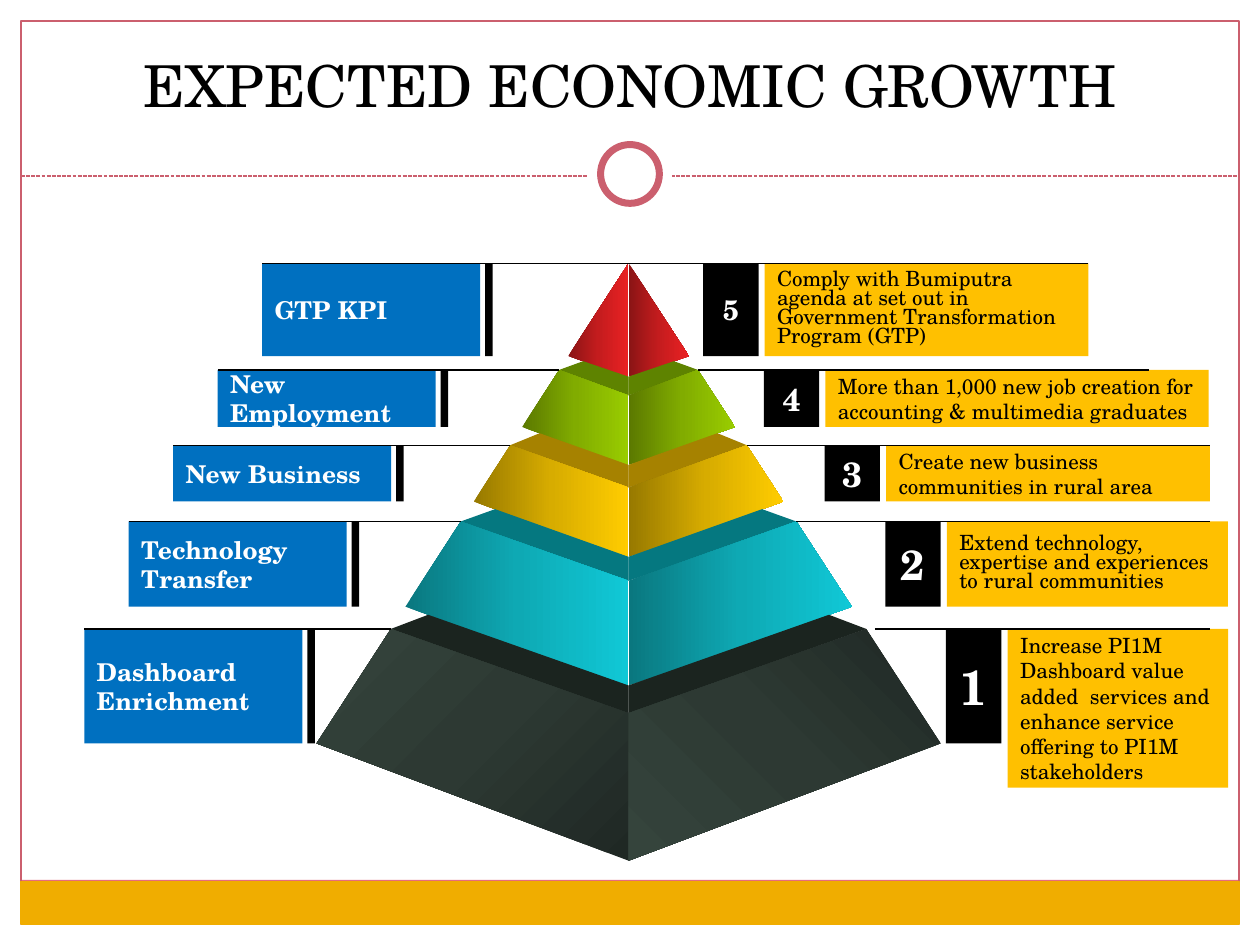
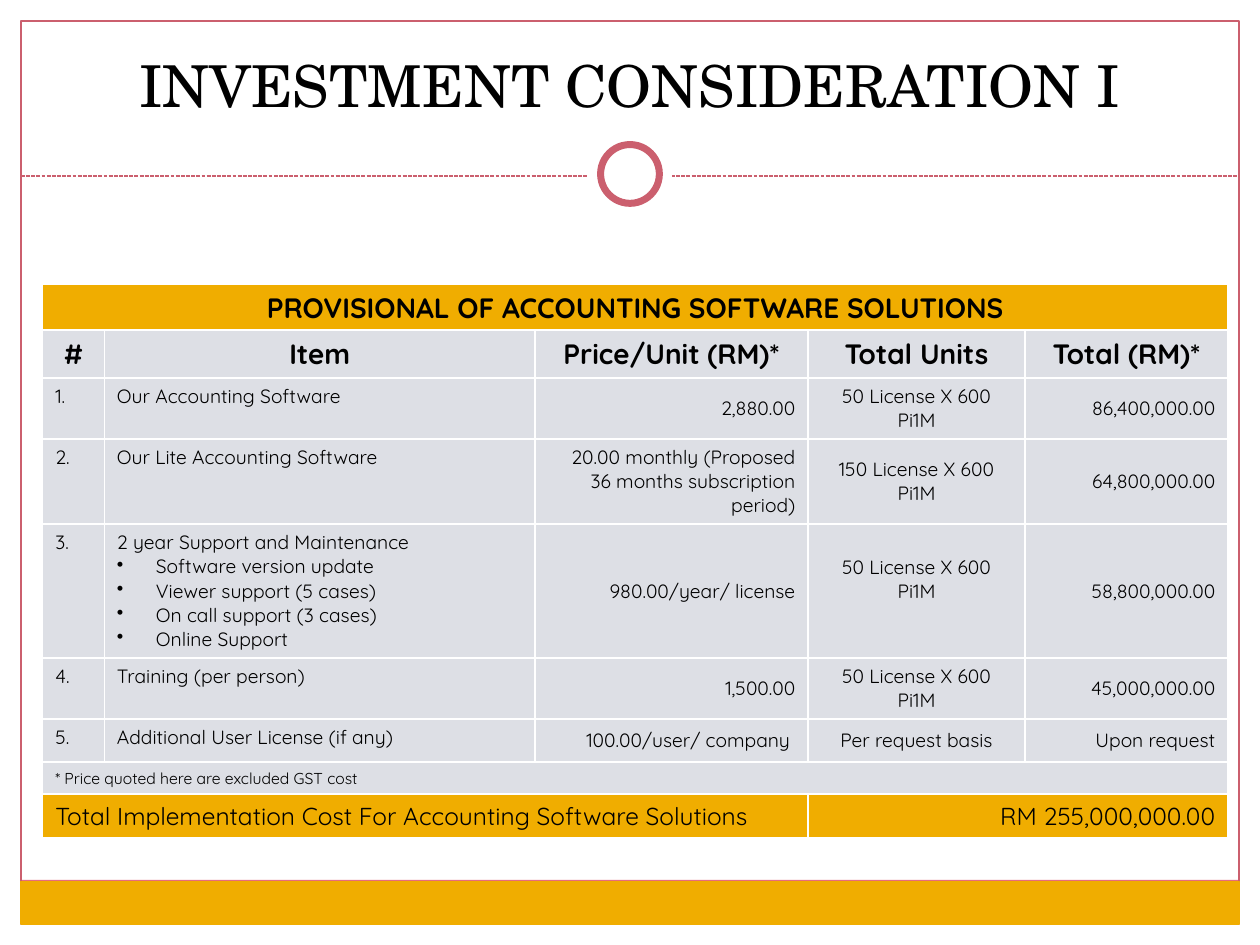
from lxml.etree import SubElement
from pptx import Presentation
from pptx.dml.color import RGBColor
from pptx.enum.dml import MSO_LINE
from pptx.enum.shapes import MSO_CONNECTOR, MSO_SHAPE as SHAPE
from pptx.enum.text import MSO_ANCHOR as ANCHOR, PP_ALIGN as ALIGN
from pptx.oxml import parse_xml
from pptx.oxml.ns import nsdecls, qn
from pptx.util import Pt

COLORS = {
    "black": "000000", "white": "FFFFFF", "rose": "CB5F6E", "pink": "E66C7D",
    "gold": "F0AD00", "amber": "FFC000", "blue": "0070C0", "grey": "DDDFE5",
}
SERIF, SANS = "TeX Gyre Schola", "Quicksand"

# Formats: font values, with the colour as a key of COLORS
TITLE = dict(name=SERIF, size=Pt(33), color="black")
LABEL = dict(name=SERIF, size=Pt(14), bold=True, color="white")
DETAIL = dict(name=SERIF, size=Pt(12), color="black")
HEAD = dict(name=SANS, size=Pt(16), bold=True, color="black")
BODY = dict(name=SANS, size=Pt(11), bold=False, color="black")
NOTE = dict(BODY, size=Pt(9))
TOTAL = dict(BODY, size=Pt(14))

# Pyramid, tip to base. Levels are heights on the slide: the outer edge of a
# face runs from top to bottom, its centre edge from mid_top to mid_bottom.
# back is the half width where the lid meets the tier above.
CENTRE, APEX, SLOPE = 359.2, 150.5, 0.65
TIERS = [
    dict(label="GTP KPI", number="5", number_size=16,
         detail="Comply with Bumiputra agenda at set out in Government "
                "Transformation Program (GTP)",
         detail_width=185, spacing=11, line_end=622,
         top=150.5, bottom=203.5, mid_top=150.5, mid_bottom=215.3,
         face=("8A1415", "C41C1E", "E92123")),
    dict(label="New Employment", number="4", number_size=18,
         detail="More than 1,000 new job creation for accounting & "
                "multimedia graduates",
         detail_width=219, line_end=656.6,
         top=211.4, bottom=244, mid_top=226, mid_bottom=265.7, back=25.9,
         face=("5B7900", "81AC00", "99CC00"), lid="5E8300"),
    dict(label="New Business", number="3", number_size=20,
         detail="Create new business communities in rural area",
         detail_width=185, line_end=691.2,
         top=254.4, bottom=286.6, mid_top=278.6, mid_bottom=318.2, back=50.8,
         face=("977900", "D7AC00", "FFCC00"), lid="A68200"),
    dict(label="Technology Transfer", number="2", number_size=24,
         detail="Extend technology, expertise and experiences to rural "
                "communities",
         detail_width=160.6, spacing=11, line_end=691.2,
         top=298, bottom=346.7, mid_top=331.9, mid_bottom=391.7, back=76.3,
         face=("0A777F", "0EA9B4", "10C8D6"), lid="057880"),
    dict(label="Dashboard Enrichment", number="1", number_size=28,
         detail="Increase PI1M Dashboard value added  services and enhance "
                "service offering to PI1M stakeholders",
         detail_width=126, detail_height=90.7, line_gap=5, line_end=691.2,
         top=359.4, bottom=424.8, mid_top=407.5, mid_bottom=491.8, back=114.5,
         face=("1F2824", "2D3933", "35443C"), lid="1B241F", angles=(225, 135)),
]

TABLE_TITLE = "PROVISIONAL OF ACCOUNTING SOFTWARE SOLUTIONS"
HEADINGS = ["#", "Item", "Price/Unit (RM)*", "Total Units", "Total (RM)*"]
ITEMS = [
    ["1.", "Our Accounting Software", "2,880.00",
     "50 License X 600 Pi1M", "86,400,000.00"],
    ["2.", "Our Lite Accounting Software",
     "20.00 monthly (Proposed 36 months subscription period)",
     "150 License X 600 Pi1M", "64,800,000.00"],
    ["3.", ["2 year Support and Maintenance", "Software version update",
            "Viewer support (5 cases)", "On call support (3 cases)",
            "Online Support"],
     "980.00/year/ license", "50 License X 600 Pi1M", "58,800,000.00"],
    ["4.", "Training (per person)", "1,500.00",
     "50 License X 600 Pi1M", "45,000,000.00"],
    ["5.", "Additional User License (if any)", "100.00/user/ company ",
     "Per request basis", "Upon request"],
]
FOOTNOTE = "* Price quoted here are excluded GST cost"
TOTAL_LABEL = "Total Implementation Cost For Accounting Software Solutions"
TOTAL_VALUE = "RM 255,000,000.00"
COL_WIDTHS = [35.2, 246.2, 156, 124, 116]
ROW_HEIGHTS = [26.3, 27.4, 34.9, 48.6, 76.6, 34.9, 24.6, 18.3, 25.1]
ITEM_STYLES = [(ALIGN.LEFT, ANCHOR.TOP), (ALIGN.LEFT, ANCHOR.TOP),
               (ALIGN.RIGHT, ANCHOR.MIDDLE), (ALIGN.CENTER, ANCHOR.MIDDLE),
               (ALIGN.RIGHT, ANCHOR.MIDDLE)]


def rgb(color):
    return RGBColor.from_string(COLORS.get(color, color))


def write(tf, lines, fmt, align=ALIGN.LEFT, spacing=None):
    """Fill a text frame, one paragraph for each line."""
    tf.word_wrap = True
    for i, line in enumerate(lines):
        p = tf.paragraphs[0] if i == 0 else tf.add_paragraph()
        p.alignment = align
        if spacing:
            p.line_spacing = Pt(spacing)
        r = p.add_run()
        r.text = line
        for key, value in fmt.items():
            if key == "color":
                r.font.color.rgb = rgb(value)
            else:
                setattr(r.font, key, value)


def add_box(s, x, y, w, h, fill=None, line=None, weight=0.75,
            kind=SHAPE.RECTANGLE):
    sp = s.shapes.add_shape(kind, Pt(x), Pt(y), Pt(w), Pt(h))
    sp.shadow.inherit = False
    if fill:
        sp.fill.solid()
        sp.fill.fore_color.rgb = rgb(fill)
    else:
        sp.fill.background()
    if line:
        sp.line.color.rgb = rgb(line)
        sp.line.width = Pt(weight)
    else:
        sp.line.fill.background()
    return sp


def add_text_box(s, x, y, w, h, fill, text, fmt, **paragraph):
    sp = add_box(s, x, y, w, h, fill)
    sp.text_frame.vertical_anchor = ANCHOR.MIDDLE
    write(sp.text_frame, [text], fmt, **paragraph)


def add_line(s, x1, x2, y, color, dash=None):
    cn = s.shapes.add_connector(MSO_CONNECTOR.STRAIGHT,
                                Pt(x1), Pt(y), Pt(x2), Pt(y))
    cn.line.color.rgb = rgb(color)
    cn.line.width = Pt(0.75)
    if dash:
        cn.line.dash_style = dash
    SubElement(cn._element.spPr, qn("a:effectLst"))


def add_polygon(s, points):
    (x, y), *rest = [(Pt(px), Pt(py)) for px, py in points]
    builder = s.shapes.build_freeform(x, y)
    builder.add_line_segments(rest, close=True)
    sp = builder.convert_to_shape()
    sp.shadow.inherit = False
    sp.line.fill.background()
    return sp


def fill_gradient(sp, colors, angle):
    stops = "".join(
        f'<a:gs pos="{pos}"><a:srgbClr val="{color}"/></a:gs>'
        for pos, color in zip((0, 50000, 100000), colors))
    grad = parse_xml(f'<a:gradFill {nsdecls("a")} rotWithShape="1"><a:gsLst>{stops}'
                     f'</a:gsLst><a:lin ang="{angle * 60000}" scaled="0"/></a:gradFill>')
    sp._element.spPr.find(qn("a:custGeom")).addnext(grad)


def new_slide(prs, title):
    """Blank slide with the shared frame, ring, footer band and title."""
    s = prs.slides.add_slide(prs.slide_layouts[6])
    add_box(s, 12, 502.8, 695.5, 24.5, "pink")
    add_box(s, 12, 12, 696, 516, line="rose")
    add_line(s, 12, 708, 100.6, "rose", MSO_LINE.SQUARE_DOT)
    add_box(s, 336, 75.4, 48, 48, "white", kind=SHAPE.OVAL)
    add_box(s, 343.2, 82.6, 33.6, 33.6, "white", "rose", 4, SHAPE.OVAL)
    add_box(s, 12, 503.6, 696, 24.4, "gold", "gold")
    tb = s.shapes.add_textbox(Pt(24.5), Pt(18), Pt(671), Pt(60))
    tb.text_frame.vertical_anchor = ANCHOR.MIDDLE
    write(tb.text_frame, [title], TITLE, ALIGN.CENTER)
    return s


def half_width(y):
    return SLOPE * (y - APEX)


def add_tier(s, tier, above):
    """Both faces of a tier, and its lid up to the tier above."""
    top, bottom = tier["top"], tier["bottom"]
    for side, angle in zip((-1, 1), tier.get("angles", (0, 0))):
        def outline(points):
            return [(CENTRE + side * dx, y) for dx, y in points]

        if above:
            edge, drop = half_width(above["bottom"]), above["mid_bottom"]
            back_y = drop - (drop - above["bottom"]) * tier["back"] / edge
            lid = add_polygon(s, outline([
                (0, drop), (0, tier["mid_top"]),
                (half_width(top), top), (tier["back"], back_y)]))
            lid.fill.solid()
            lid.fill.fore_color.rgb = rgb(tier["lid"])
        face = add_polygon(s, outline([
            (half_width(top), top), (0, tier["mid_top"]),
            (0, tier["mid_bottom"]), (half_width(bottom), bottom)]))
        fill_gradient(face, tier["face"], angle)


def add_tier_labels(s, i, tier):
    y, h = tier["top"], tier["bottom"] - tier["top"]
    left, right = 149.8 - 25.4 * i, 401.8 + 34.7 * i
    add_text_box(s, left, y, 124.6, h, "blue", tier["label"], LABEL)
    add_box(s, left + 127.4, y, 4.3, h, "black")
    add_text_box(s, right, y, 31.7, h, "black", tier["number"],
                 dict(LABEL, size=Pt(tier["number_size"])), align=ALIGN.CENTER)
    add_text_box(s, right + 35.2, y, tier["detail_width"],
                 tier.get("detail_height", h), "amber", tier["detail"], DETAIL,
                 spacing=tier.get("spacing"))
    reach = half_width(y)
    add_line(s, CENTRE - reach, left, y, "black")
    add_line(s, CENTRE + reach + tier.get("line_gap", 0), tier["line_end"], y, "black")


def build_growth(prs):
    s = new_slide(prs, "EXPECTED ECONOMIC GROWTH")
    for tier, above in zip(TIERS, [None] + TIERS):
        add_tier(s, tier, above)
    for i, tier in enumerate(TIERS):
        add_tier_labels(s, i, tier)


def add_bullet(p):
    pPr = p._p.get_or_add_pPr()
    pPr.set("marL", str(Pt(22.3)))
    pPr.set("indent", str(-Pt(22.3)))
    SubElement(pPr, qn("a:buChar"), char="•")


def build_investment(prs):
    s = new_slide(prs, "INVESTMENT CONSIDERATION I")
    table = s.shapes.add_table(
        len(ROW_HEIGHTS), len(COL_WIDTHS), Pt(24.4), Pt(162.2),
        Pt(sum(COL_WIDTHS)), Pt(sum(ROW_HEIGHTS))).table
    for col, width in zip(table.columns, COL_WIDTHS):
        col.width = Pt(width)
    for row, height in zip(table.rows, ROW_HEIGHTS):
        row.height = Pt(height)

    def put(row, col, content, fmt, align=ALIGN.LEFT, anchor=ANCHOR.TOP,
            fill="grey", span=1):
        cell = table.cell(row, col)
        if span > 1:
            cell.merge(table.cell(row, col + span - 1))
        for part in range(col, col + span):
            table.cell(row, part).fill.solid()
            table.cell(row, part).fill.fore_color.rgb = rgb(fill)
        cell.vertical_anchor = anchor
        lines = content if isinstance(content, list) else [content]
        write(cell.text_frame, lines, fmt, align)
        for p in cell.text_frame.paragraphs[1:]:
            add_bullet(p)

    put(0, 0, TABLE_TITLE, HEAD, ALIGN.CENTER, fill="gold", span=5)
    for col, heading in enumerate(HEADINGS):
        put(1, col, heading, HEAD, ALIGN.CENTER)
    for row, item in enumerate(ITEMS, 2):
        for col, (content, style) in enumerate(zip(item, ITEM_STYLES)):
            put(row, col, content, BODY, *style)
    table.cell(4, 3).margin_bottom = Pt(17.4)
    put(7, 0, FOOTNOTE, NOTE, span=5)
    put(8, 0, TOTAL_LABEL, TOTAL, ALIGN.LEFT, ANCHOR.MIDDLE, "gold", 3)
    put(8, 3, TOTAL_VALUE, TOTAL, ALIGN.RIGHT, ANCHOR.MIDDLE, "gold", 2)


def main():
    prs = Presentation()
    prs.slide_width, prs.slide_height = Pt(720), Pt(540)
    build_growth(prs)
    build_investment(prs)
    prs.save("out.pptx")


if __name__ == "__main__":
    main()
